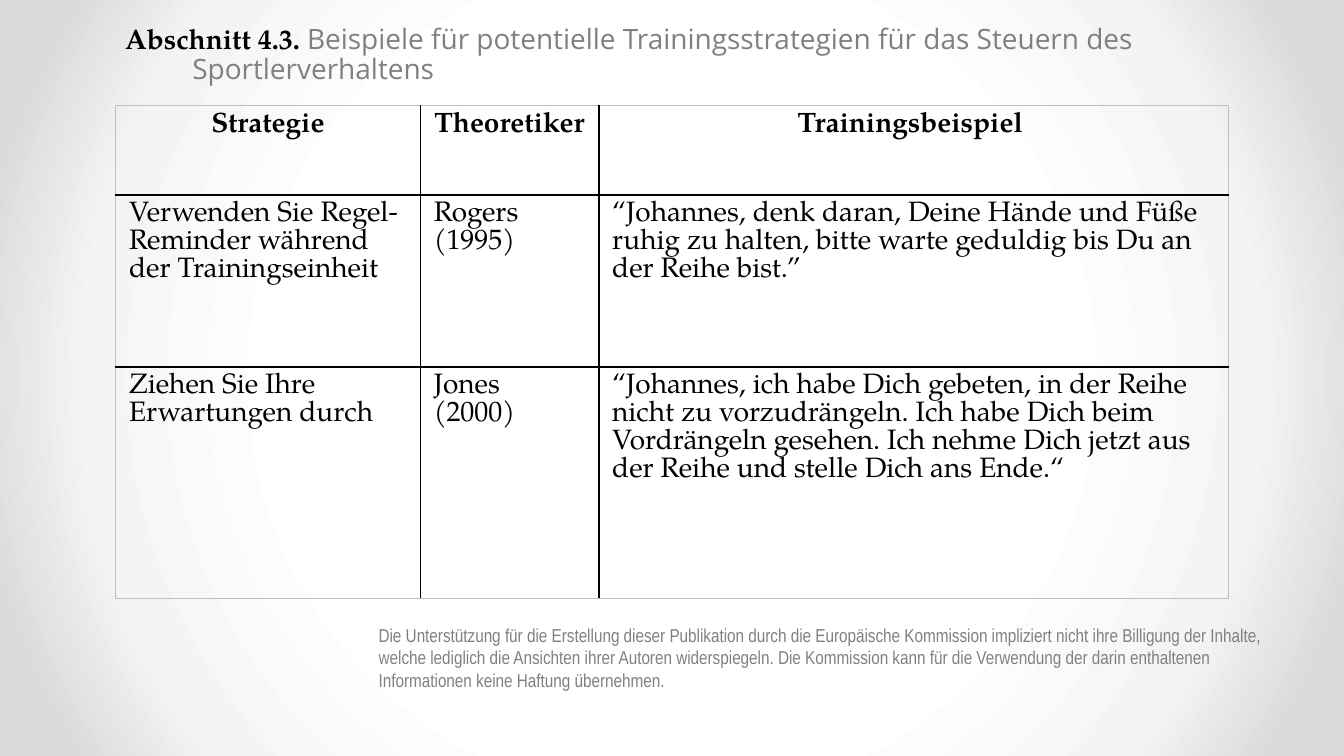
import pptx
import pptx.util
import pptx.oxml
import pptx.oxml.ns
import pptx.dml.color
import pptx.enum.text

Pt = pptx.util.Pt
ALIGN = pptx.enum.text.PP_ALIGN
COLORS = {"ink": "000000", "gray": "808080", "frame": "BFBFBF"}
SERIF, SANS, NARROW = "TeX Gyre Pagella", "Open Sans", "Arial Narrow"
STOPS = [(50, "FFFFFF"), (76, "F4F4F4"), (92, "DADADA")]
NS = pptx.oxml.ns.nsdecls("a", "p")


class Deck:
    def __init__(self, width, height):
        self.file = pptx.Presentation()
        self.file.slide_width, self.file.slide_height = Pt(width), Pt(height)
        self.slide = self.file.slides.add_slide(self.file.slide_layouts[5])

    def backdrop(self, stops):
        marks = "".join(
            f'<a:gs pos="{pos * 1000}"><a:srgbClr val="{tone}"/></a:gs>'
            for pos, tone in stops)
        rect = 'l="50000" t="50000" r="50000" b="50000"'
        self.slide.background.fill.solid()
        props = self.slide.background._cSld.bg.bgPr
        props.replace(props[0], pptx.oxml.parse_xml(
            f'<a:gradFill {NS} rotWithShape="1"><a:gsLst>{marks}</a:gsLst>'
            f'<a:path path="circle"><a:fillToRect {rect}/></a:path></a:gradFill>'))

    def run(self, para, text, size, face, color="ink", bold=False):
        run = para.add_run()
        run.text = text
        font = run.font
        font.size, font.name, font.bold = Pt(size), face, bold
        font.color.rgb = pptx.dml.color.RGBColor.from_string(COLORS[color])

    def place(self, shape, left, top, width, height):
        shape.left, shape.top = Pt(left), Pt(top)
        shape.width, shape.height = Pt(width), Pt(height)
        frame = shape.text_frame
        frame.word_wrap = True
        frame.auto_size = pptx.enum.text.MSO_AUTO_SIZE.NONE
        frame.vertical_anchor = pptx.enum.text.MSO_ANCHOR.TOP
        para = frame.paragraphs[0]
        para.alignment = ALIGN.LEFT
        return para

    def title(self, box, runs, indent):
        para = self.place(self.slide.shapes.title, *box)
        para.line_spacing = 0.9
        props = para._p.get_or_add_pPr()
        props.set("marL", str(Pt(indent)))
        props.set("indent", str(-Pt(indent)))
        for run in runs:
            self.run(para, *run)

    def note(self, box, text):
        shape = self.slide.shapes.add_textbox(0, 0, 0, 0)
        self.run(self.place(shape, *box), text, 10, NARROW, "gray")

    def border(self, cell, side, color, width):
        cell._tc.get_or_add_tcPr().append(pptx.oxml.parse_xml(
            f'<a:{side} {NS} w="{Pt(width)}"><a:solidFill>'
            f'<a:srgbClr val="{COLORS[color]}"/></a:solidFill></a:{side}>'))

    def table(self, left, top, widths, heights, rows):
        table = self.slide.shapes.add_table(
            len(rows), len(widths), Pt(left), Pt(top),
            Pt(sum(widths)), Pt(sum(heights))).table
        table.horz_banding = False
        for col, width in zip(table.columns, widths):
            col.width = Pt(width)
        for row, height in zip(table.rows, heights):
            row.height = Pt(height)
        for i, row in enumerate(rows):
            for j, text in enumerate(row):
                cell = table.cell(i, j)
                edges = {"lnL": j == 0, "lnR": j == len(widths) - 1,
                         "lnT": i == 0, "lnB": i == len(rows) - 1}
                for side, outer in edges.items():
                    self.border(cell, side, *(("frame", 0.5) if outer else ("ink", 1)))
                cell.fill.background()
                para = cell.text_frame.paragraphs[0]
                para.alignment = ALIGN.LEFT if i else ALIGN.CENTER
                para.line_spacing = Pt(15)
                self.run(para, text, 15, SERIF, bold=i == 0)


def main():
    deck = Deck(720, 405)
    deck.backdrop(STOPS)
    deck.note((195.8, 330.5, 499, 48),
              "Die Unterstützung für die Erstellung dieser Publikation durch die "
              "Europäische Kommission impliziert nicht ihre Billigung der Inhalte, "
              "welche lediglich die Ansichten ihrer Autoren widerspiegeln. Die "
              "Kommission kann für die Verwendung der darin enthaltenen "
              "Informationen keine Haftung übernehmen.")
    deck.table(62, 56.2, [163.2, 95.6, 337.6], [48.2, 92.2, 123.8], [
        ["Strategie", "Theoretiker", "Trainingsbeispiel "],
        ["Verwenden Sie Regel-Reminder während der Trainingseinheit",
         "Rogers (1995)",
         "“Johannes, denk daran, Deine Hände und Füße ruhig zu halten, "
         "bitte warte geduldig bis Du an der Reihe bist.”"],
        ["Ziehen Sie Ihre Erwartungen durch",
         "Jones (2000)",
         "“Johannes, ich habe Dich gebeten, in der Reihe nicht zu "
         "vorzudrängeln. Ich habe Dich beim Vordrängeln gesehen. Ich nehme "
         "Dich jetzt aus der Reihe und stelle Dich ans Ende.“"]])
    deck.title((59.8, 10, 585.4, 25.2), [
        ("Abschnitt 4.3. ", 15, SERIF, "ink", True),
        ("Beispiele für potentielle Trainingsstrategien für das Steuern des "
         "Sportlerverhaltens", 15, SANS, "gray")], 36)
    deck.file.save("out.pptx")


if __name__ == "__main__":
    main()
